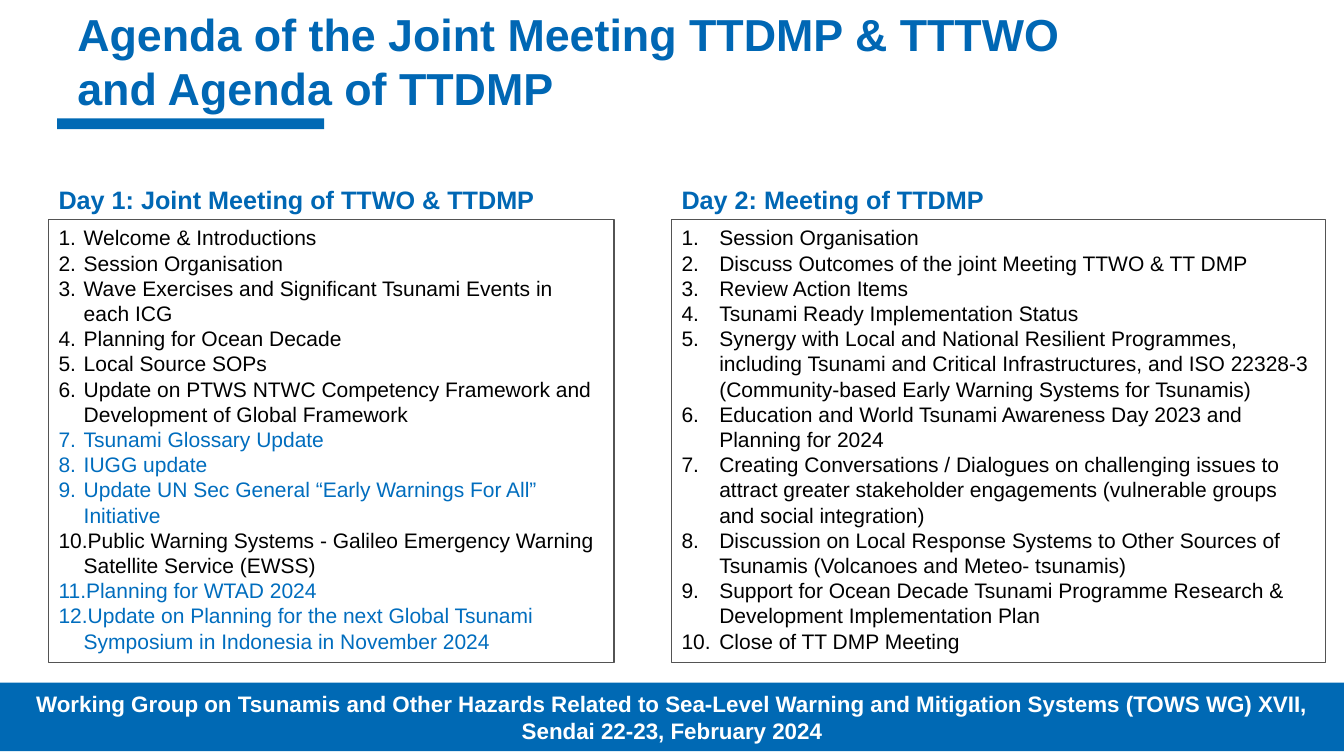
from pptx import Presentation
from pptx.dml.color import RGBColor
from pptx.enum.shapes import MSO_SHAPE
from pptx.enum.text import MSO_ANCHOR, MSO_AUTO_SIZE, PP_ALIGN
from pptx.oxml.ns import qn
from pptx.util import Pt
from lxml.etree import SubElement

BLUE, DEEP, LINK = "0069B4", "0067B4", "006DBE"
BLACK, WHITE, GREY = "000000", "FFFFFF", "535353"
TOP, HIGH = 157, 316  # agenda boxes

DAY1 = [
    "Welcome & Introductions",
    "Session Organisation",
    "Wave Exercises and Significant Tsunami Events in each ICG",
    "Planning for Ocean Decade",
    "Local Source SOPs",
    "Update on PTWS NTWC Competency Framework and Development of Global Framework",
    "Tsunami Glossary Update",
    "IUGG update",
    "Update UN Sec General “Early Warnings For All” Initiative",
    "Public Warning Systems - Galileo Emergency Warning Satellite Service (EWSS)",
    "Planning for WTAD 2024",
    "Update on Planning for the next Global Tsunami Symposium in Indonesia in November 2024",
]
MARKED = {7, 8, 9, 11, 12}  # blue items of day 1

DAY2 = [
    "Session Organisation",
    "Discuss Outcomes of the joint Meeting TTWO & TT DMP",
    "Review Action Items",
    "Tsunami Ready Implementation Status",
    "Synergy with Local and National Resilient Programmes, including Tsunami and "
    "Critical Infrastructures, and ISO 22328-3 (Community-based Early Warning Systems "
    "for Tsunamis)",
    "Education and World Tsunami Awareness Day 2023 and Planning for 2024",
    "Creating Conversations / Dialogues on challenging issues to attract greater "
    "stakeholder engagements (vulnerable groups and social integration)",
    "Discussion on Local Response Systems to Other Sources of Tsunamis (Volcanoes and "
    "Meteo- tsunamis)",
    "Support for Ocean Decade Tsunami Programme Research & Development Implementation Plan",
    "Close of TT DMP Meeting",
]

FOOTER = ("Working Group on Tsunamis and Other Hazards Related to Sea-Level Warning and "
          "Mitigation Systems (TOWS WG) XVII, Sendai 22-23, February 2024")


def color(code):
    return RGBColor.from_string(code)


def apply(item, style):
    for name, value in style.items():
        setattr(item, name, value)


def place(shape, left, top, width, height):
    apply(shape, {"left": Pt(left), "top": Pt(top),
                  "width": Pt(width), "height": Pt(height)})


def frame(shape, anchor):
    apply(shape.text_frame, {"word_wrap": True, "auto_size": MSO_AUTO_SIZE.NONE,
                             "vertical_anchor": anchor})
    return shape.text_frame


def write(para, text, size, code, bold=False, align=PP_ALIGN.LEFT):
    para.text = text
    apply(para, {"alignment": align, "space_before": Pt(0)})
    apply(para.font, {"name": "Arial", "size": Pt(size), "bold": bold})
    para.font.color.rgb = color(code)


def label(shape, box, text, size, anchor):
    place(shape, *box)
    write(frame(shape, anchor).paragraphs[0], text, size, DEEP, True)


def number(para, indent):
    props = para._p.get_or_add_pPr()
    props.set("marL", str(Pt(indent)))
    props.set("indent", str(-Pt(indent)))
    SubElement(props, qn("a:buFont"), typeface="+mj-lt")
    SubElement(props, qn("a:buAutoNum"), type="arabicPeriod")


def agenda(shape, left, width, items, indent, marked=()):
    place(shape, left, TOP, width, HIGH)
    shape.line.color.rgb = color(GREY)
    shape.line.width = Pt(0.75)
    text = frame(shape, MSO_ANCHOR.TOP)
    for pos, item in enumerate(items, 1):
        para = text.paragraphs[0] if pos == 1 else text.add_paragraph()
        number(para, indent)
        write(para, item, 15, LINK if pos in marked else BLACK)


def band(slide, *box):
    shape = slide.shapes.add_shape(MSO_SHAPE.RECTANGLE, *map(Pt, box))
    shape.shadow.inherit = False
    shape.fill.solid()
    shape.fill.fore_color.rgb = color(BLUE)
    shape.line.fill.background()
    return shape


def main():
    deck = Presentation()
    apply(deck, {"slide_width": Pt(960), "slide_height": Pt(540)})
    slide = deck.slides.add_slide(deck.slide_layouts.get_by_name("Comparison"))
    title, head1, list1, head2, list2 = slide.placeholders

    # Title and its underline
    label(title, (48, 0, 763, 87),
          "Agenda of the Joint Meeting TTDMP & TTTWO and Agenda of TTDMP",
          32, MSO_ANCHOR.MIDDLE)
    band(slide, 40.8, 84.5, 190.8, 7.7)

    # Two days
    label(head1, (34.6, 128.2, 396, 28.8),
          "Day 1: Joint Meeting of TTWO & TTDMP", 18, MSO_ANCHOR.TOP)
    agenda(list1, 34.6, 404, DAY1, 18, MARKED)
    label(head2, (479.6, 128.2, 445.7, 28.8),
          "Day 2: Meeting of TTDMP", 18, MSO_ANCHOR.TOP)
    agenda(list2, 479.6, 467, DAY2, 27)

    # Footer band
    foot = frame(band(slide, 0, 487.6, 960, 49), MSO_ANCHOR.MIDDLE)
    apply(foot, {"margin_left": Pt(5), "margin_right": Pt(5),
                 "margin_top": Pt(5), "margin_bottom": Pt(5)})
    write(foot.paragraphs[0], FOOTER, 16, WHITE, True, PP_ALIGN.CENTER)

    deck.save("out.pptx")


if __name__ == "__main__":
    main()
